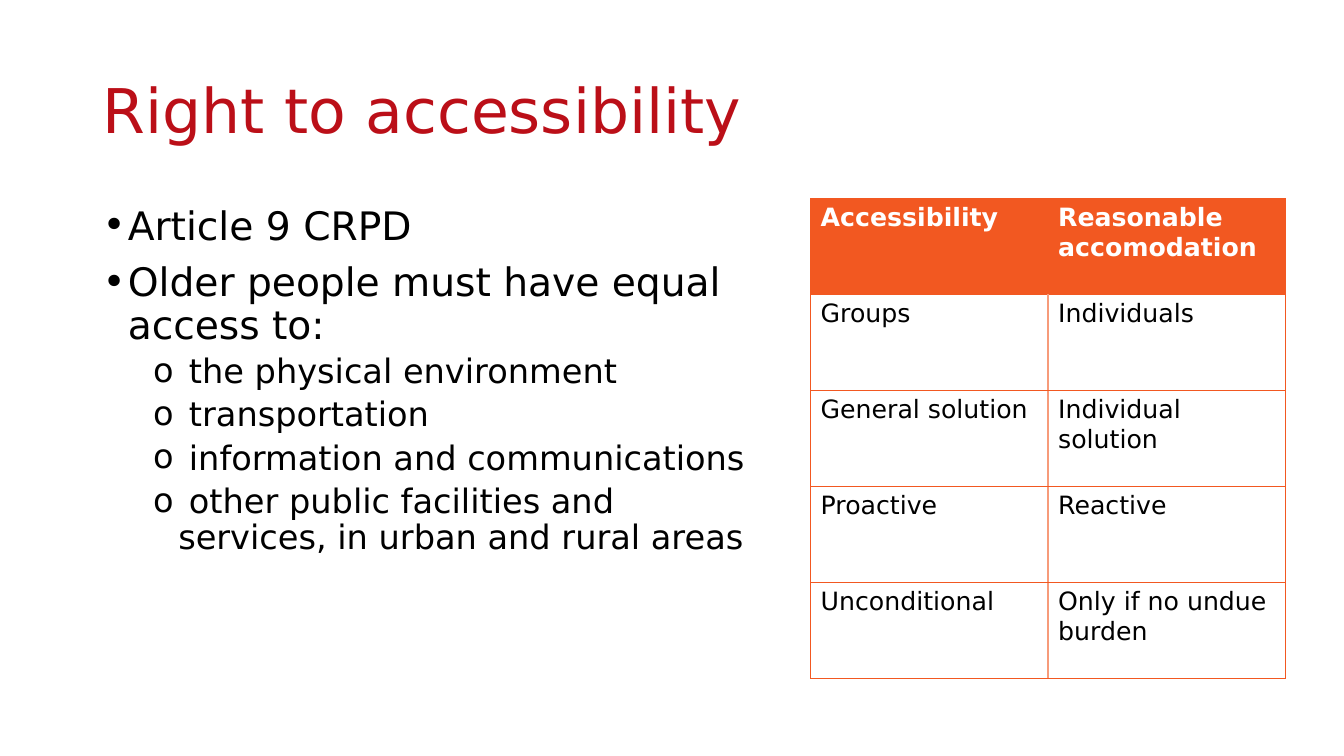
from lxml.etree import SubElement
from pptx import Presentation
from pptx.dml.color import RGBColor
from pptx.enum.text import MSO_ANCHOR
from pptx.oxml.ns import qn
from pptx.util import Inches, Pt

FONT = "DejaVu Sans"
COLORS = {
    "title": "BB0F18",
    "text": "000000",
    "header_text": "FFFFFF",
    "accent": "F25821",
    "divider": "F79B7A",
}
TITLE = "Right to accessibility"
# Each point: indent level, wording
POINTS = [
    (0, "Article 9 CRPD"),
    (0, "Older people must have equal access to:"),
    (1, " the physical environment"),
    (1, " transportation"),
    (1, " information and communications"),
    (1, " other public facilities and services, in urban and rural areas"),
]
# Each level: bullet, left indent, text size, space before
LEVELS = [("•", 0.25, 28, 10), ("o", 0.75, 24, 5)]
HANGING = 0.25
COMPARISON = [
    ("Accessibility", "Reasonable accomodation"),
    ("Groups", "Individuals"),
    ("General solution", "Individual solution"),
    ("Proactive", "Reactive"),
    ("Unconditional", "Only if no undue burden"),
]


def add_run(paragraph, text, size, color, bold=False):
    run = paragraph.add_run()
    run.text = text
    run.font.name = FONT
    run.font.size = Pt(size)
    run.font.bold = bold
    run.font.color.rgb = RGBColor.from_string(COLORS[color])


def add_frame(slide, left, top, width, height):
    box = slide.shapes.add_textbox(
        Inches(left), Inches(top), Inches(width), Inches(height))
    box.text_frame.word_wrap = True
    return box.text_frame


def add_title(slide, left, top, width, height):
    frame = add_frame(slide, left, top, width, height)
    frame.vertical_anchor = MSO_ANCHOR.MIDDLE
    heading = frame.paragraphs[0]
    heading.line_spacing = 0.9
    add_run(heading, TITLE, 44, "title")


def set_bullet(paragraph, bullet, indent):
    properties = paragraph._p.get_or_add_pPr()
    properties.set("marL", str(Inches(indent)))
    properties.set("indent", str(-Inches(HANGING)))
    SubElement(properties, qn("a:buFont")).set("typeface", FONT)
    SubElement(properties, qn("a:buChar")).set("char", bullet)


def add_points(slide, left, top, width, height):
    frame = add_frame(slide, left, top, width, height)
    for index, (level, wording) in enumerate(POINTS):
        point = frame.add_paragraph() if index else frame.paragraphs[0]
        bullet, indent, size, gap = LEVELS[level]
        set_bullet(point, bullet, indent)
        point.level = level
        point.line_spacing = 0.9
        point.space_before = Pt(gap if index else 0)
        add_run(point, wording, size, "text")


def set_border(cell, side, color, weight):
    line = SubElement(cell._tc.get_or_add_tcPr(), qn(f"a:ln{side}"))
    line.set("w", str(Pt(weight)))
    fill = SubElement(line, qn("a:solidFill"))
    SubElement(fill, qn("a:srgbClr")).set("val", COLORS[color])


def add_comparison(slide, left, top, width, height):
    row_count, column_count = len(COMPARISON), len(COMPARISON[0])
    table = slide.shapes.add_table(
        row_count, column_count,
        Inches(left), Inches(top), Inches(width), Inches(height)).table
    for column in table.columns:
        column.width = Inches(width / column_count)
    for row in table.rows:
        row.height = Inches(height / row_count)

    for row_index, entries in enumerate(COMPARISON):
        is_header = row_index == 0
        for column_index, entry in enumerate(entries):
            cell = table.cell(row_index, column_index)
            # Orange outline and rules, paler divider between body columns
            for side in "LRTB":
                inner = side == ("R" if column_index == 0 else "L")
                if inner and not is_header:
                    set_border(cell, side, "divider", 1)
                else:
                    set_border(cell, side, "accent", 0.5)
            if is_header:
                cell.fill.solid()
                cell.fill.fore_color.rgb = RGBColor.from_string(COLORS["accent"])
            else:
                cell.fill.background()
            add_run(cell.text_frame.paragraphs[0], entry, 18,
                    "header_text" if is_header else "text", is_header)


def main():
    presentation = Presentation()
    presentation.slide_width = Inches(13.33)
    presentation.slide_height = Inches(7.5)
    slide = presentation.slides.add_slide(presentation.slide_layouts[6])
    add_title(slide, 0.92, 0.4, 11.5, 1.45)
    add_points(slide, 0.92, 2, 6.6, 4.76)
    add_comparison(slide, 8.04, 1.97, 4.71, 4.76)
    presentation.save("out.pptx")


if __name__ == "__main__":
    main()
